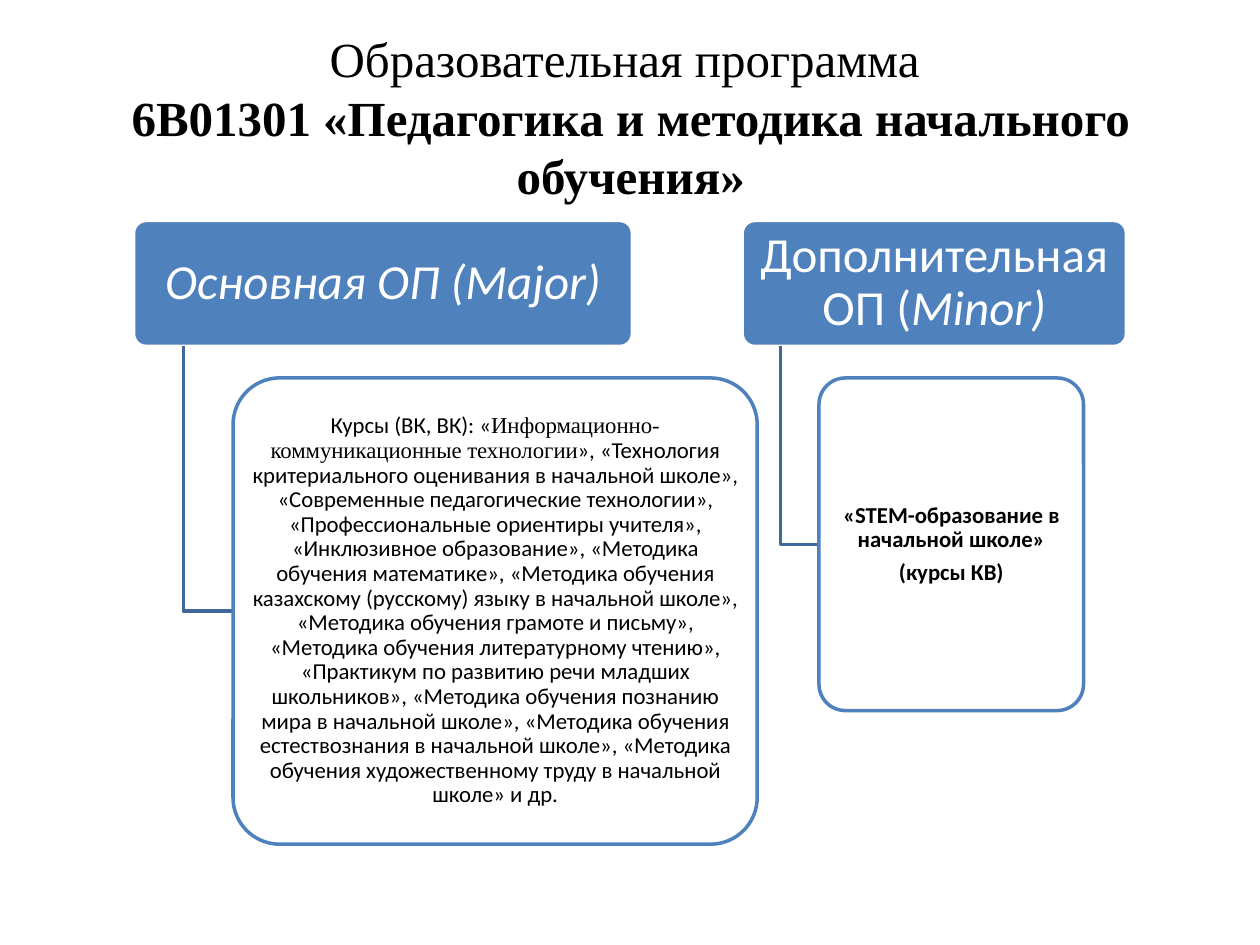
from lxml import etree
from pptx import Presentation
from pptx.dml.color import RGBColor
from pptx.enum.shapes import MSO_SHAPE
from pptx.enum.text import MSO_ANCHOR, PP_ALIGN
from pptx.oxml.ns import qn
from pptx.util import Pt

ROUNDED = MSO_SHAPE.ROUNDED_RECTANGLE
MIDDLE = MSO_ANCHOR.MIDDLE
CENTER = PP_ALIGN.CENTER

BLUE = RGBColor(0x4F, 0x81, 0xBD)
DARK_BLUE = RGBColor(0x3F, 0x67, 0x97)
WHITE = RGBColor(0xFF, 0xFF, 0xFF)
BLACK = RGBColor(0x00, 0x00, 0x00)

SANS = "Calibri"
SERIF = "Times New Roman"

HEADER_TOP, HEADER_HEIGHT = 126, 72
DETAIL_TOP = 216

MAJOR_COURSES = (
    "», «Технология критериального оценивания в начальной школе», "
    "«Современные педагогические технологии», "
    "«Профессиональные ориентиры учителя», «Инклюзивное образование», "
    "«Методика обучения математике», "
    "«Методика обучения казахскому (русскому) языку в начальной школе», "
    "«Методика обучения грамоте и письму», "
    "«Методика обучения литературному чтению», "
    "«Практикум по развитию речи младших школьников», "
    "«Методика обучения познанию мира в начальной школе», "
    "«Методика обучения естествознания в начальной школе», "
    "«Методика обучения художественному труду в начальной школе» и др."
)

BRANCHES = [
    {
        "header": (76.3, 285.1),
        "header_text": [[("Основная ОП (Major)", {"italic": True})]],
        "detail": (133.2, 299.5, 266.4),
        "detail_text": [[
            ("Курсы (ВК, ВК): «", {}),
            ("Информационно-коммуникационные технологии", {"name": SERIF}),
            (MAJOR_COURSES, {}),
        ]],
    },
    {
        "header": (424.1, 219.6),
        "header_text": [[("Дополнительная ОП (", {}), ("Мinor)", {"italic": True})]],
        "detail": (468, 151.2, 190.1),
        "detail_text": [
            [("«STEM-образование в начальной школе»", {"bold": True})],
            [("(курсы КВ)", {"bold": True})],
        ],
    },
]


def format_run(span, size, color, name=SANS, bold=False, italic=False):
    font = span.font
    font.size = Pt(size)
    font.color.rgb = color
    font.name = name
    font.bold = bold
    font.italic = italic


def add_title(page):
    title = page.shapes.title
    title.left, title.top, title.width, title.height = Pt(14.4), Pt(21.6), Pt(692), Pt(90)
    frame = title.text_frame
    frame.vertical_anchor = MIDDLE
    frame.text = "Образовательная программа \v6В01301 «Педагогика и методика начального обучения»"
    para = frame.paragraphs[0]
    para.alignment = CENTER
    for span, bold in zip(para.runs, (False, True)):
        format_run(span, 28, BLACK, SERIF, bold)


def add_box(page, left, top, width, height, fill, line):
    box = page.shapes.add_shape(ROUNDED, Pt(left), Pt(top), Pt(width), Pt(height))
    box.adjustments[0] = 0.1
    box.shadow.inherit = False
    box.fill.solid()
    box.fill.fore_color.rgb = fill
    box.line.color.rgb = line
    box.line.width = Pt(2)
    return box


def set_opacity(box, percent):
    color = box.fill._xPr.find(qn("a:solidFill"))[0]
    etree.SubElement(color, qn("a:alpha"), val=str(percent * 1000))


def fill_text(box, paragraphs, size, color, side_inset, end_inset):
    frame = box.text_frame
    frame.word_wrap = True
    frame.vertical_anchor = MIDDLE
    frame.margin_left = frame.margin_right = Pt(side_inset)
    frame.margin_top = frame.margin_bottom = Pt(end_inset)
    for index, spans in enumerate(paragraphs):
        para = frame.add_paragraph() if index else frame.paragraphs[0]
        para.alignment = CENTER
        para.line_spacing = 0.9
        para.space_after = Pt(size * 0.35)
        for text, style in spans:
            span = para.add_run()
            span.text = text
            format_run(span, size, color, **style)


def add_elbow(page, x, top, bottom, end_x):
    builder = page.shapes.build_freeform(Pt(x), Pt(top))
    builder.add_line_segments([(Pt(x), Pt(bottom)), (Pt(end_x), Pt(bottom))], close=False)
    elbow = builder.convert_to_shape()
    elbow.shadow.inherit = False
    elbow.fill.background()
    elbow.line.color.rgb = DARK_BLUE
    elbow.line.width = Pt(2)


def add_branch(page, branch):
    left, width = branch["header"]
    detail_left, detail_width, detail_height = branch["detail"]

    header = add_box(page, left, HEADER_TOP, width, HEADER_HEIGHT, BLUE, WHITE)
    fill_text(header, branch["header_text"], 28, WHITE, 4.2, 2.8)

    add_elbow(page, left + width / 10, HEADER_TOP + HEADER_HEIGHT,
              DETAIL_TOP + detail_height / 2, detail_left)

    detail = add_box(page, detail_left, DETAIL_TOP, detail_width, detail_height, WHITE, BLUE)
    set_opacity(detail, 90)
    fill_text(detail, branch["detail_text"], 13, BLACK, 2, 1.3)


def main():
    deck = Presentation()
    deck.slide_width, deck.slide_height = Pt(720), Pt(540)
    page = deck.slides.add_slide(deck.slide_layouts[5])
    add_title(page)
    for branch in BRANCHES:
        add_branch(page, branch)
    deck.save("out.pptx")


if __name__ == "__main__":
    main()
